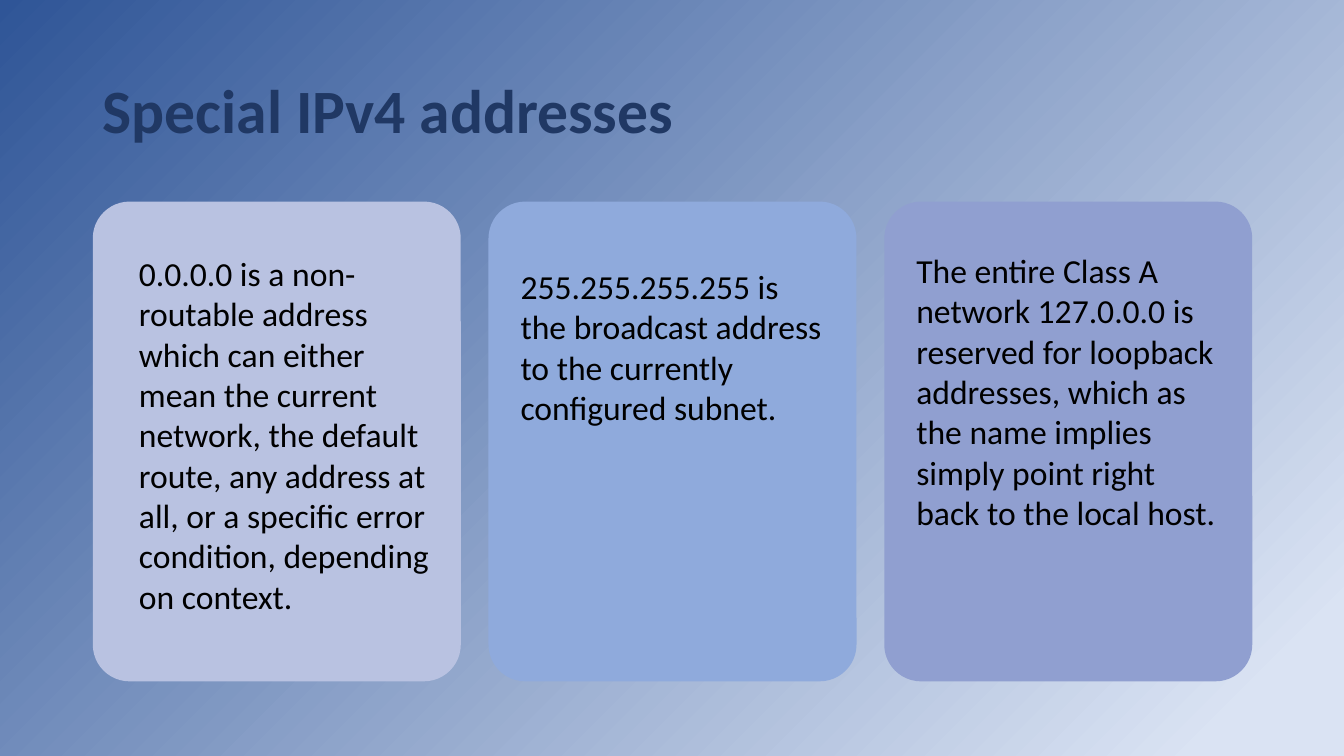
from pptx import Presentation
from pptx.dml.color import RGBColor
from pptx.enum.shapes import MSO_SHAPE
from pptx.enum.text import MSO_ANCHOR, MSO_AUTO_SIZE, PP_ALIGN
from pptx.util import Inches, Pt

ROUND = MSO_SHAPE.ROUNDED_RECTANGLE
MIDDLE, TOP = MSO_ANCHOR.MIDDLE, MSO_ANCHOR.TOP
LEFT = PP_ALIGN.LEFT
FIXED, GROW = MSO_AUTO_SIZE.NONE, MSO_AUTO_SIZE.SHAPE_TO_FIT_TEXT

BLUE = RGBColor(0x2F, 0x55, 0x97)
PALE = RGBColor(0xDA, 0xE3, 0xF3)
NAVY = RGBColor(0x20, 0x38, 0x64)
BLACK = RGBColor(0, 0, 0)
LILAC = RGBColor(0xB9, 0xC2, 0xE1)
SKY = RGBColor(0x8F, 0xAA, 0xDC)
VIOLET = RGBColor(0x90, 0x9F, 0xD0)

MARGIN, STEP = 0.92, 3.925
CARD_TOP, CARD_W, CARD_H = 2, 3.65, 4.76
TEXT_W = 3.2

# fill, text offset from the card's left and top, text height, text
CARDS = [
    (LILAC, 0.36, 0.46, 4.04,
     "0.0.0.0 is a non-routable address which can either mean the current "
     "network, the default route, any address at all, or a specific error "
     "condition, depending on context."),
    (SKY, 0.22, 0.59, 4.04,
     "255.255.255.255 is the broadcast address to the currently configured "
     "subnet."),
    (VIOLET, 0.22, 0.43, 3.23,
     "The entire Class A network 127.0.0.0 is reserved for loopback "
     "addresses, which as the name implies simply point right back to the "
     "local host."),
]


def write(frame, text, size=24, color=BLACK, bold=False, anchor=TOP,
          fit=GROW, spacing=1.0):
    frame.word_wrap = True
    frame.auto_size = fit
    frame.vertical_anchor = anchor
    par = frame.paragraphs[0]
    par.alignment = LEFT
    par.line_spacing = spacing
    run = par.add_run()
    run.text = text
    font = run.font
    font.name, font.size, font.bold = "Calibri", Pt(size), bold
    font.color.rgb = color


class Deck:
    def __init__(self):
        self.prs = Presentation()
        self.prs.slide_width = Inches(13.33)
        self.prs.slide_height = Inches(7.5)
        self.slide = self.prs.slides.add_slide(self.prs.slide_layouts[5])

    def backdrop(self, start, end):
        fill = self.slide.background.fill
        fill.gradient()
        fill.gradient_angle = 315
        for stop, color, place in zip(fill.gradient_stops, (start, end), (0, 0.93)):
            stop.color.rgb = color
            stop.position = place

    def title(self, text):
        box = self.slide.shapes.title
        box.left, box.top = Inches(MARGIN), Inches(0.4)
        box.width, box.height = Inches(11.5), Inches(1.45)
        write(box.text_frame, text, size=44, color=NAVY, bold=True,
              anchor=MIDDLE, fit=FIXED, spacing=0.9)

    def card(self, left, fill, dx, dy, height, text):
        group = self.slide.shapes.add_group_shape()
        panel = group.shapes.add_shape(ROUND, Inches(left), Inches(CARD_TOP),
                                       Inches(CARD_W), Inches(CARD_H))
        panel.adjustments[0] = 0.1
        panel.shadow.inherit = False
        panel.fill.solid()
        panel.fill.fore_color.rgb = fill
        panel.line.fill.background()
        box = group.shapes.add_textbox(Inches(left + dx), Inches(CARD_TOP + dy),
                                       Inches(TEXT_W), Inches(height))
        write(box.text_frame, text)


def main():
    deck = Deck()
    deck.backdrop(BLUE, PALE)
    deck.title("Special IPv4 addresses")
    for i, card in enumerate(CARDS):
        deck.card(MARGIN + i * STEP, *card)
    deck.prs.save("out.pptx")


if __name__ == "__main__":
    main()
